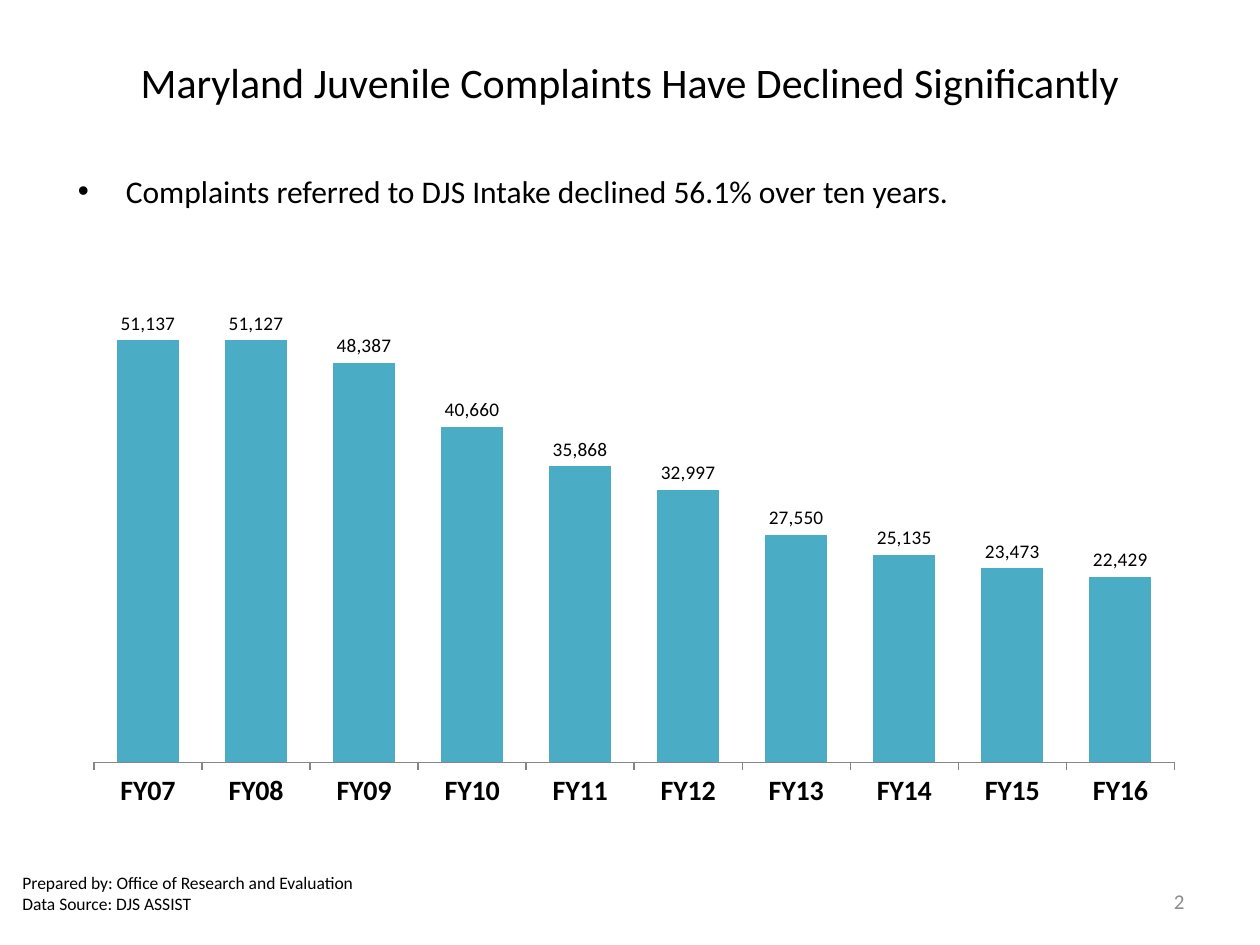
"""Build the slide on the decline in Maryland juvenile complaints."""
import pptx
import pptx.chart.data
import pptx.dml.color
import pptx.enum.chart
import pptx.enum.text
import pptx.oxml
import pptx.oxml.ns
import pptx.util
from lxml import etree

Inches, Pt = pptx.util.Inches, pptx.util.Pt
ALIGN = pptx.enum.text.PP_ALIGN
FONT, BLACK, GREY, TEAL, AXIS = "Calibri", "000000", "8C8C8C", "4BACC6", "868686"

TEXTS = {
    "title": ((0, 0.3, 10, 0.7), ["Maryland Juvenile Complaints Have Declined Significantly"],
              24, BLACK, ALIGN.CENTER),
    "bullet": ((0.52, 1.11, 9.08, 0.81),
               ["Complaints referred to DJS Intake declined 56.1% over ten years."],
               18, BLACK, ALIGN.LEFT),
    "number": ((7.17, 6.95, 2.33, 0.4), ["2"], 12, GREY, ALIGN.RIGHT),
    "source": ((0.08, 6.83, 2.92, 0.52),
               ["Prepared by: Office of Research and Evaluation", "Data Source: DJS ASSIST"],
               10, BLACK, ALIGN.LEFT),
}
COMPLAINTS = [22429, 23473, 25135, 27550, 32997, 35868, 40660, 48387, 51127, 51137]
YEARS = [f"FY{16 - i:02d}" for i in range(len(COMPLAINTS))]
CHART_BOX = (0.33, 1.83, 9.25, 5)
PLOT = {"x": 0.045, "y": 0.058, "w": 0.927, "h": 0.786}


def rgb(value):
    return pptx.dml.color.RGBColor.from_string(value)


def style(font, size, color=BLACK, bold=False):
    font.name, font.size, font.bold = FONT, Pt(size), bold
    font.color.rgb = rgb(color)


def add_text(s, box, lines, size, color, align):
    sp = s.shapes.add_textbox(*map(Inches, box))
    tf = sp.text_frame
    tf.word_wrap = True
    tf.vertical_anchor = pptx.enum.text.MSO_ANCHOR.MIDDLE
    for i, line in enumerate(lines):
        p = tf.paragraphs[0] if i == 0 else tf.add_paragraph()
        p.alignment = align
        r = p.add_run()
        r.text = line
        style(r.font, size, color)
    return sp


def add_bullet(p, indent):
    pPr = p._p.get_or_add_pPr()
    pPr.set("marL", str(Inches(indent)))
    pPr.set("indent", str(-Inches(indent)))
    etree.SubElement(pPr, pptx.oxml.ns.qn("a:buFont")).set("typeface", "Arial")
    etree.SubElement(pPr, pptx.oxml.ns.qn("a:buChar")).set("char", "•")


def set_plot_area(chart, plot):
    items = [("layoutTarget", "inner"), ("xMode", "edge"), ("yMode", "edge"), *plot.items()]
    area = chart._chartSpace.chart.plotArea
    for old in area.findall(pptx.oxml.ns.qn("c:layout")):
        area.remove(old)
    layout = etree.Element(pptx.oxml.ns.qn("c:layout"))
    manual = etree.SubElement(layout, pptx.oxml.ns.qn("c:manualLayout"))
    for tag, value in items:
        etree.SubElement(manual, pptx.oxml.ns.qn(f"c:{tag}")).set("val", str(value))
    area.insert(0, layout)


def add_complaints_chart(s):
    data = pptx.chart.data.CategoryChartData(number_format="#,##0")
    data.categories = YEARS
    data.add_series("Series 1", COMPLAINTS)
    kind = pptx.enum.chart.XL_CHART_TYPE.COLUMN_CLUSTERED
    chart = s.shapes.add_chart(kind, *map(Inches, CHART_BOX), data).chart
    chart.has_legend = chart.has_title = False
    style(chart.font, 10)
    set_plot_area(chart, PLOT)

    cat, val = chart.category_axis, chart.value_axis
    cat.reverse_order = True
    cat.major_tick_mark = pptx.enum.chart.XL_TICK_MARK.OUTSIDE
    cat.format.line.color.rgb = rgb(AXIS)
    cat.format.line.width = Pt(0.75)
    style(cat.tick_labels.font, 16, bold=True)
    val.minimum_scale, val.maximum_scale = 0, 60000
    val.has_major_gridlines = val.visible = False

    plot = chart.plots[0]
    plot.gap_width, plot.overlap, plot.vary_by_categories = 74, 52, False
    fill = plot.series[0].format.fill
    fill.solid()
    fill.fore_color.rgb = rgb(TEAL)
    plot.has_data_labels = True
    labels = plot.data_labels
    labels.show_value = True
    labels.number_format, labels.number_format_is_linked = "#,##0", False
    labels.position = pptx.enum.chart.XL_LABEL_POSITION.OUTSIDE_END
    style(labels.font, 11)


def main():
    prs = pptx.Presentation()
    prs.slide_width, prs.slide_height = Inches(10), Inches(7.5)
    s = prs.slides.add_slide(prs.slide_layouts[6])
    boxes = {name: add_text(s, *text) for name, text in TEXTS.items()}
    add_bullet(boxes["bullet"].text_frame.paragraphs[0], 0.38)
    add_complaints_chart(s)
    prs.save("out.pptx")


if __name__ == "__main__":
    main()
